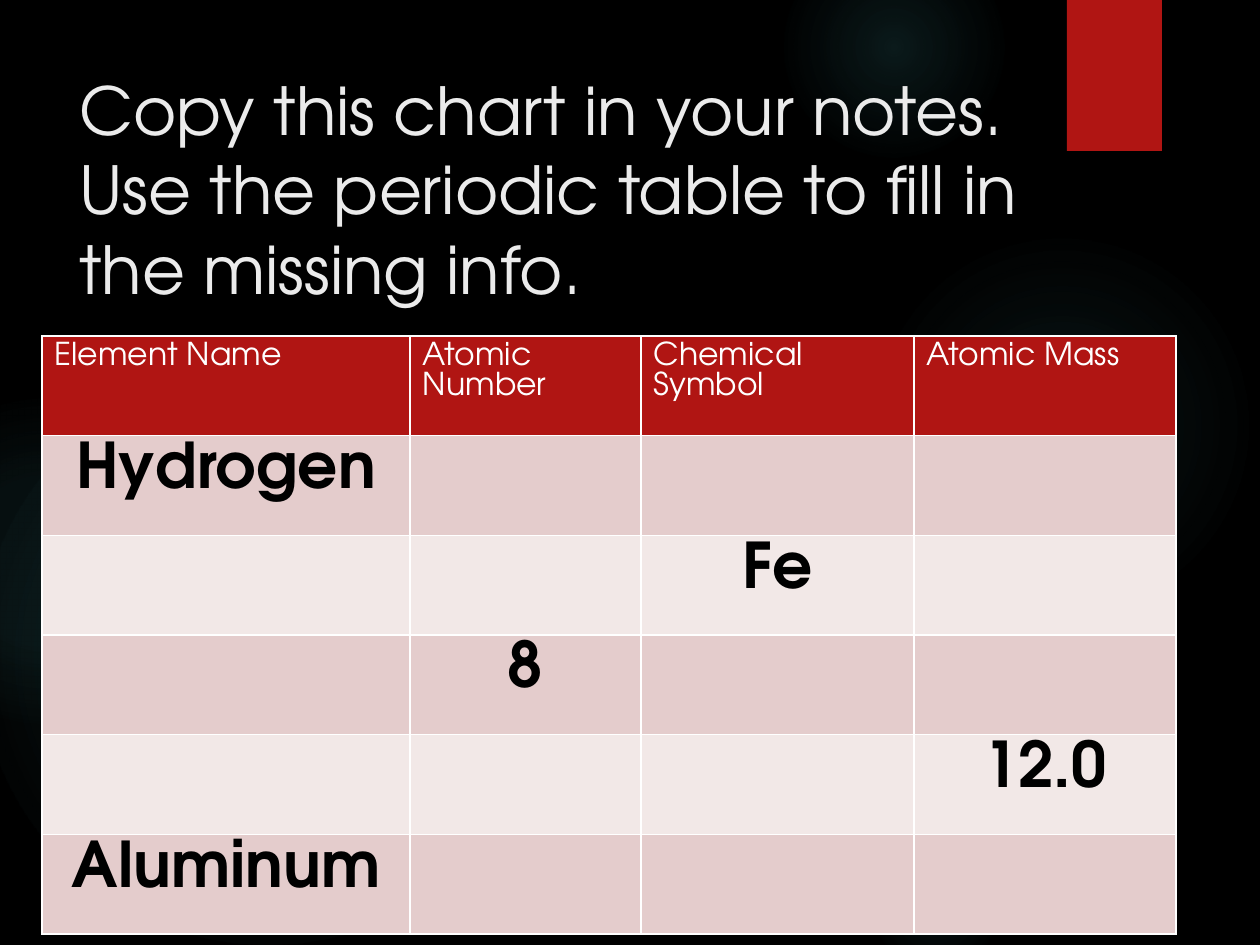
"""Build a periodic table worksheet slide with a fill-in table."""
from lxml import etree
from pptx import Presentation
from pptx.dml.color import RGBColor
from pptx.enum.shapes import MSO_SHAPE
from pptx.enum.text import MSO_ANCHOR, PP_ALIGN
from pptx.oxml import parse_xml
from pptx.util import Pt

OVAL, RECT = MSO_SHAPE.OVAL, MSO_SHAPE.RECTANGLE
TOP, LEFT, CENTER = MSO_ANCHOR.TOP, PP_ALIGN.LEFT, PP_ALIGN.CENTER
PX = 914400 / 126
FONT = "TeX Gyre Adventor"
NS = "http://schemas.openxmlformats.org/drawingml/2006/main"
RED, WHITE, BLACK, GLOW = "B01513", "FFFFFF", "000000", "50B9C1"
BANDS = ["F2E8E7", "E4CCCC"]


def emu(*lengths):
    return [round(n * PX) for n in lengths]


def rgb(value):
    return RGBColor.from_string(value)


prs = Presentation()
prs.slide_width, prs.slide_height = emu(1260, 945)
s = prs.slides.add_slide(prs.slide_layouts[6])
s.background.fill.solid()
s.background.fill.fore_color.rgb = rgb(BLACK)

glows = [
    (868, 231, 388, [(0, 7), (36, 6), (69, 0)]),
    (784, -63, 220, [(0, 14), (36, 7), (73, 0)]),
    (868, 840, 136, [(0, 9), (36, 5), (66, 0)]),
    (-21, 368, 577, [(0, 11), (36, 10), (75, 0)]),
    (-116, 399, 325, [(0, 8), (36, 8), (72, 0)]),
]
for x, y, size, stops in glows:
    sp = s.shapes.add_shape(OVAL, *emu(x, y, size, size))
    sp.shadow.inherit = False
    sp.line.fill.background()
    gs = "".join(
        f'<a:gs pos="{pos * 1000}"><a:srgbClr val="{GLOW}">'
        f'<a:alpha val="{alpha * 1000}"/></a:srgbClr></a:gs>'
        for pos, alpha in stops)
    grad = parse_xml(
        f'<a:gradFill xmlns:a="{NS}" rotWithShape="1"><a:gsLst>{gs}</a:gsLst>'
        '<a:path path="circle"><a:fillToRect l="50000" t="50000" r="50000" b="50000"/>'
        '</a:path></a:gradFill>')
    sp.element.spPr.find(f"{{{NS}}}prstGeom").addnext(grad)

sp = s.shapes.add_shape(RECT, *emu(1067, 0, 95, 151))
sp.shadow.inherit = False
sp.fill.solid()
sp.fill.fore_color.rgb = rgb(RED)
sp.line.fill.background()

tf = s.shapes.add_textbox(*emu(67, 63, 973, 193)).text_frame
tf.word_wrap = True
tf.vertical_anchor = TOP
r = tf.paragraphs[0].add_run()
r.text = "Copy this chart in your notes. Use the periodic table to fill in the missing info."
r.font.name = FONT
r.font.size = Pt(37.8)
r.font.color.rgb = rgb("EBEBEB")

rows = [
    ["Element Name", "Atomic Number", "Chemical Symbol", "Atomic Mass"],
    ["Hydrogen", "", "", ""],
    ["", "", "Fe", ""],
    ["", "8", "", ""],
    ["", "", "", "12.0"],
    ["Aluminum", "", "", ""],
]
widths = emu(368, 231, 273, 262)
left, top, height = emu(42, 336, 598)
table = s.shapes.add_table(len(rows), len(widths), left, top, sum(widths), height).table
table.first_row = table.horz_banding = False
for column, width in zip(table.columns, widths):
    column.width = width
for i, row in enumerate(rows):
    table.rows[i].height = height // len(rows)
    header = i == 0
    for j, text in enumerate(row):
        cell = table.cell(i, j)
        tcPr = cell._tc.get_or_add_tcPr()
        for side in ("lnL", "lnR", "lnT", "lnB"):
            ln = etree.SubElement(tcPr, f"{{{NS}}}{side}", w=str(Pt(1)))
            fill = etree.SubElement(ln, f"{{{NS}}}solidFill")
            etree.SubElement(fill, f"{{{NS}}}srgbClr", val=WHITE)
        cell.fill.solid()
        cell.fill.fore_color.rgb = rgb(RED if header else BANDS[i % 2])
        if text:
            p = cell.text_frame.paragraphs[0]
            p.alignment = LEFT if header else CENTER
            r = p.add_run()
            r.text = text
            r.font.name = FONT
            r.font.size = Pt(18 if header else 36)
            r.font.bold = not header
            r.font.color.rgb = rgb(WHITE if header else BLACK)

prs.save("out.pptx")
